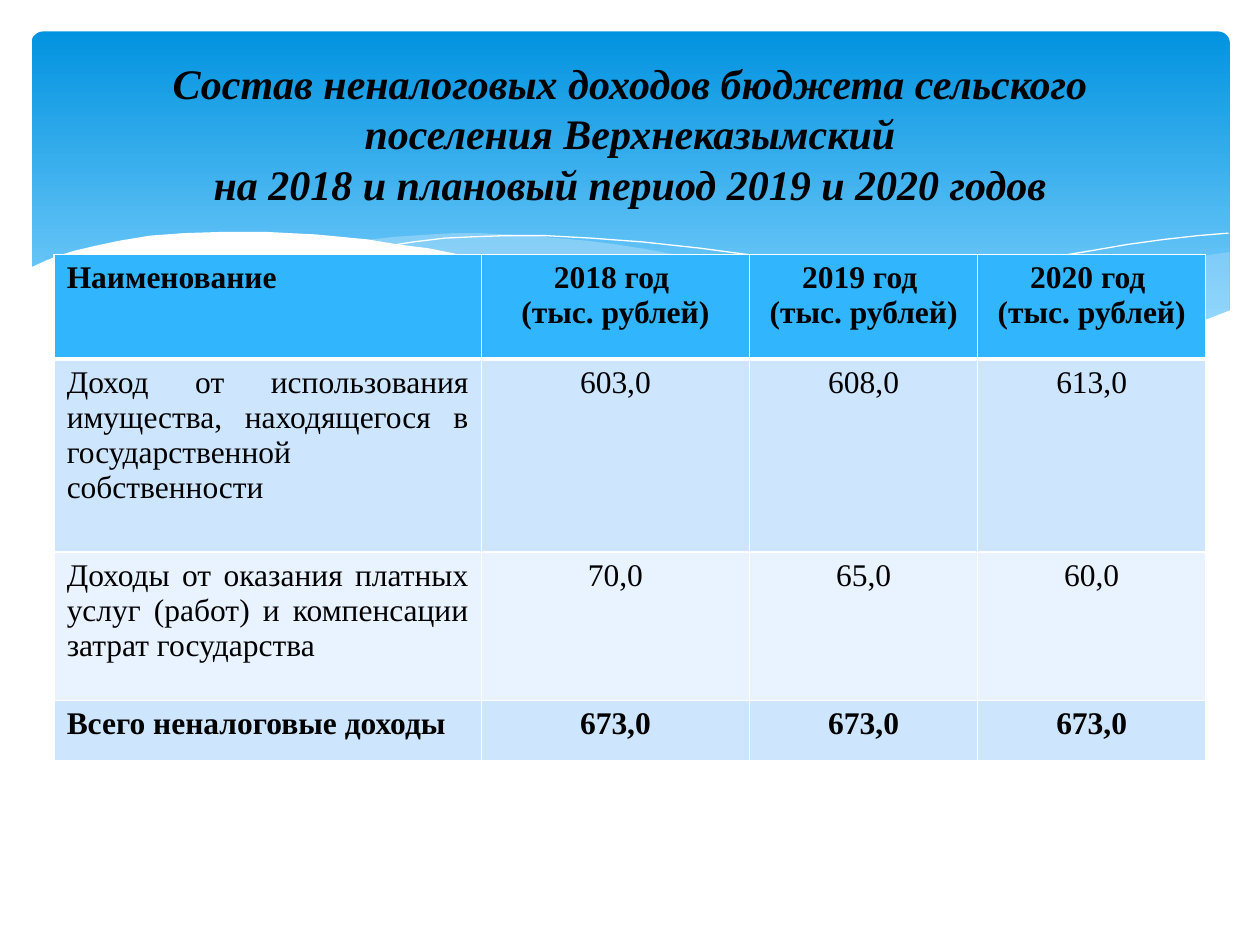
import dataclasses

import pptx
import pptx.dml.color
import pptx.enum.shapes
import pptx.enum.text
import pptx.oxml
import pptx.oxml.ns
import pptx.util
from pptx.util import Inches


@dataclasses.dataclass(frozen=True)
class Theme:
    """Colours, font and type sizes of the slide."""
    font: str = "Times New Roman"
    title_size: int = 24
    table_size: int = 18
    text: str = "000000"
    white: str = "FFFFFF"
    sky_top: str = "0293E0"
    sky_bottom: str = "83D3FE"
    mist: str = "C6E7FC"
    header: str = "31B6FD"
    bands: tuple = ("CEE5FE", "E8F3FF")


THEME = Theme()
ALIGN = pptx.enum.text.PP_ALIGN

RIGHT_MIST = [
    (9.76, 2), (9.48, 2.04), (9.21, 2.1), (8.91, 2.16), (8.61, 2.23), (8.05, 2.37),
    (7.53, 2.48), (7.06, 2.57), (6.61, 2.65), (6.91, 2.69), (7.19, 2.72), (7.45, 2.75),
    (7.69, 2.77), (8.03, 2.78), (8.35, 2.77), (8.63, 2.75), (8.89, 2.72), (9.13, 2.67),
    (9.35, 2.62), (9.49, 2.57), (9.63, 2.52), (9.76, 2.47)]
MIDDLE_MIST = [
    (8.93, 2.73), (8.66, 2.69), (8.37, 2.65), (8.07, 2.6), (7.75, 2.54), (7.41, 2.47),
    (7.06, 2.4), (6.68, 2.31), (6.29, 2.22), (5.98, 2.14), (5.69, 2.08), (5.41, 2.03),
    (5.14, 1.98), (4.89, 1.94), (4.65, 1.91), (4.42, 1.89), (4.2, 1.87), (3.99, 1.86),
    (3.8, 1.85), (3.61, 1.85), (3.44, 1.86), (3.13, 1.88), (2.86, 1.91), (3.23, 1.96),
    (3.62, 2.03), (4.04, 2.11), (4.49, 2.22), (4.91, 2.32), (5.3, 2.4), (5.66, 2.48),
    (6.01, 2.55), (6.34, 2.61), (6.65, 2.66), (6.95, 2.7), (7.22, 2.74), (7.48, 2.76),
    (7.73, 2.77), (7.96, 2.78), (8.28, 2.78), (8.57, 2.77), (8.76, 2.75)]
LONG_CREST = [
    (3.09, 1.95), (3.28, 1.92), (3.53, 1.89), (3.74, 1.88), (4.01, 1.87), (4.33, 1.87),
    (4.69, 1.89), (5.1, 1.92), (5.56, 1.97), (6.08, 2.04), (6.65, 2.13), (6.95, 2.19),
    (7.27, 2.26), (7.6, 2.33), (7.95, 2.41), (8.31, 2.51), (8.69, 2.61), (9.07, 2.72)]
RIGHT_CREST = [
    (6.13, 2.57), (6.53, 2.46), (6.95, 2.35), (7.48, 2.23), (8.06, 2.1), (8.36, 2.04),
    (8.66, 1.99), (8.95, 1.94), (9.24, 1.9), (9.51, 1.87), (9.75, 1.85)]
WHITE_WAVE = [
    (9.77, 2.46), (9.59, 2.53), (9.4, 2.59), (9.2, 2.65), (8.99, 2.69), (8.75, 2.73),
    (8.5, 2.75), (8.23, 2.77), (7.93, 2.76), (7.61, 2.75), (7.26, 2.72), (6.88, 2.68),
    (6.48, 2.62), (6.03, 2.54), (5.55, 2.45), (5.03, 2.33), (4.47, 2.2), (4.18, 2.13),
    (3.91, 2.07), (3.65, 2.02), (3.4, 1.97), (3.16, 1.94), (2.92, 1.9), (2.71, 1.88),
    (2.5, 1.86), (2.3, 1.85), (2.11, 1.84), (1.77, 1.84), (1.46, 1.85), (1.19, 1.87),
    (0.95, 1.91), (0.76, 1.95), (0.59, 1.99), (0.46, 2.03), (0.36, 2.07), (0.23, 2.13),
    (0.23, 3.29), (9.77, 3.29)]

COLUMN_WIDTHS = [3.39, 2.13, 1.81, 1.81]
ROW_HEIGHTS = [0.83, 1.53, 1.18, 0.48]
INCOME_ROWS = [
    ["Наименование"] + [f"{year} год \n(тыс. рублей)" for year in (2018, 2019, 2020)],
    ["Доход от использования имущества, находящегося в государственной собственности ",
     "603,0", "608,0", "613,0"],
    ["Доходы от оказания платных услуг (работ) и компенсации затрат государства ",
     "70,0", "65,0", "60,0"],
    ["Всего неналоговые доходы", "673,0", "673,0", "673,0"],
]


def rgb(value):
    """Turn a hex string into a colour."""
    return pptx.dml.color.RGBColor.from_string(value)


def add_run(paragraph, text, size, bold=False, italic=False):
    """Add one formatted run to a paragraph."""
    run = paragraph.add_run()
    run.text = text
    run.font.name = THEME.font
    run.font.size = pptx.util.Pt(size)
    run.font.bold = bold
    run.font.italic = italic
    run.font.color.rgb = rgb(THEME.text)


def add_sky(slide):
    """Draw the rounded gradient panel behind the title."""
    sky = slide.shapes.add_shape(
        pptx.enum.shapes.MSO_SHAPE.ROUNDED_RECTANGLE,
        Inches(0.25), Inches(0.25), Inches(9.51), Inches(2.7))
    sky.adjustments[0] = 0.034
    sky.shadow.inherit = False
    sky.line.fill.background()
    sky.fill.gradient()
    sky.fill.gradient_angle = 270
    stops = zip(sky.fill.gradient_stops, (0, 0.9), (THEME.sky_top, THEME.sky_bottom))
    for stop, position, color in stops:
        stop.position = position
        stop.color.rgb = rgb(color)


def add_outline(slide, points, closed):
    """Build a freeform through points given in inches."""
    corners = [(Inches(x), Inches(y)) for x, y in points]
    builder = slide.shapes.build_freeform(*corners[0])
    builder.add_line_segments(corners[1:], close=closed)
    outline = builder.convert_to_shape()
    outline.shadow.inherit = False
    return outline


def add_wave(slide, points, color, opacity=100):
    """Add a filled wave without an outline."""
    wave = add_outline(slide, points, True)
    wave.line.fill.background()
    wave.fill.solid()
    wave.fill.fore_color.rgb = rgb(color)
    if opacity < 100:
        tint = wave.element.spPr.find(".//" + pptx.oxml.ns.qn("a:srgbClr"))
        tint.append(pptx.oxml.parse_xml(
            f'<a:alpha {pptx.oxml.ns.nsdecls("a")} val="{opacity * 1000}"/>'))


def add_crest(slide, points):
    """Add an open white hairline."""
    crest = add_outline(slide, points, False)
    crest.fill.background()
    crest.line.color.rgb = rgb(THEME.white)
    crest.line.width = 0


def set_borders(cell, bottom, top):
    """Give a cell white borders, with widths in points for top and bottom."""
    properties = cell._tc.get_or_add_tcPr()
    widths = {"lnL": 1, "lnR": 1, "lnT": top, "lnB": bottom}
    for index, (side, width) in enumerate(widths.items()):
        properties.insert(index, pptx.oxml.parse_xml(
            f'<a:{side} {pptx.oxml.ns.nsdecls("a")} w="{width * 12700}"><a:solidFill>'
            f'<a:srgbClr val="{THEME.white}"/></a:solidFill></a:{side}>'))


def add_income_table(slide):
    """Add the table of non-tax income by year."""
    last = len(INCOME_ROWS) - 1
    table = slide.shapes.add_table(
        len(ROW_HEIGHTS), len(COLUMN_WIDTHS), Inches(0.43), Inches(2.02),
        Inches(sum(COLUMN_WIDTHS)), Inches(sum(ROW_HEIGHTS))).table
    for column, width in zip(table.columns, COLUMN_WIDTHS):
        column.width = Inches(width)
    for r, (row, height) in enumerate(zip(INCOME_ROWS, ROW_HEIGHTS)):
        table.rows[r].height = Inches(height)
        edge = r in (0, last)
        for c, text in enumerate(row):
            cell = table.cell(r, c)
            cell.fill.solid()
            cell.fill.fore_color.rgb = rgb(THEME.bands[(r - 1) % 2] if r else THEME.header)
            set_borders(cell, bottom=1 if r else 3, top=3 if r == 1 else 1)
            for i, line in enumerate(text.split("\n")):
                frame = cell.text_frame
                paragraph = frame.add_paragraph() if i else frame.paragraphs[0]
                name_align = ALIGN.LEFT if edge else ALIGN.JUSTIFY
                paragraph.alignment = ALIGN.CENTER if c else name_align
                add_run(paragraph, line, THEME.table_size, bold=edge)


def add_title(slide):
    """Place the title in front of the panel."""
    title = slide.shapes.title
    title.left, title.top = Inches(0.5), Inches(0.37)
    title.width, title.height = Inches(9), Inches(1.37)
    frame = title.text_frame
    frame.word_wrap = True
    frame.auto_size = pptx.enum.text.MSO_AUTO_SIZE.NONE
    frame.vertical_anchor = pptx.enum.text.MSO_ANCHOR.MIDDLE
    heading = frame.paragraphs[0]
    heading.alignment = ALIGN.CENTER
    add_run(heading, "Состав неналоговых доходов бюджета сельского поселения Верхнеказымский",
            THEME.title_size, bold=True, italic=True)
    heading.add_line_break()
    add_run(heading, " на 2018 и плановый период 2019 и 2020 годов ",
            THEME.title_size, bold=True, italic=True)
    title.element.getparent().append(title.element)


def main():
    """Build the slide and save it."""
    deck = pptx.Presentation()
    deck.slide_width, deck.slide_height = Inches(10), Inches(7.5)
    slide = deck.slides.add_slide(deck.slide_layouts.get_by_name("Title Only"))
    add_sky(slide)
    add_wave(slide, RIGHT_MIST, THEME.mist, opacity=29)
    add_wave(slide, MIDDLE_MIST, THEME.mist, opacity=40)
    add_crest(slide, LONG_CREST)
    add_crest(slide, RIGHT_CREST)
    add_wave(slide, WHITE_WAVE, THEME.white)
    add_income_table(slide)
    add_title(slide)
    deck.save("out.pptx")


if __name__ == "__main__":
    main()
